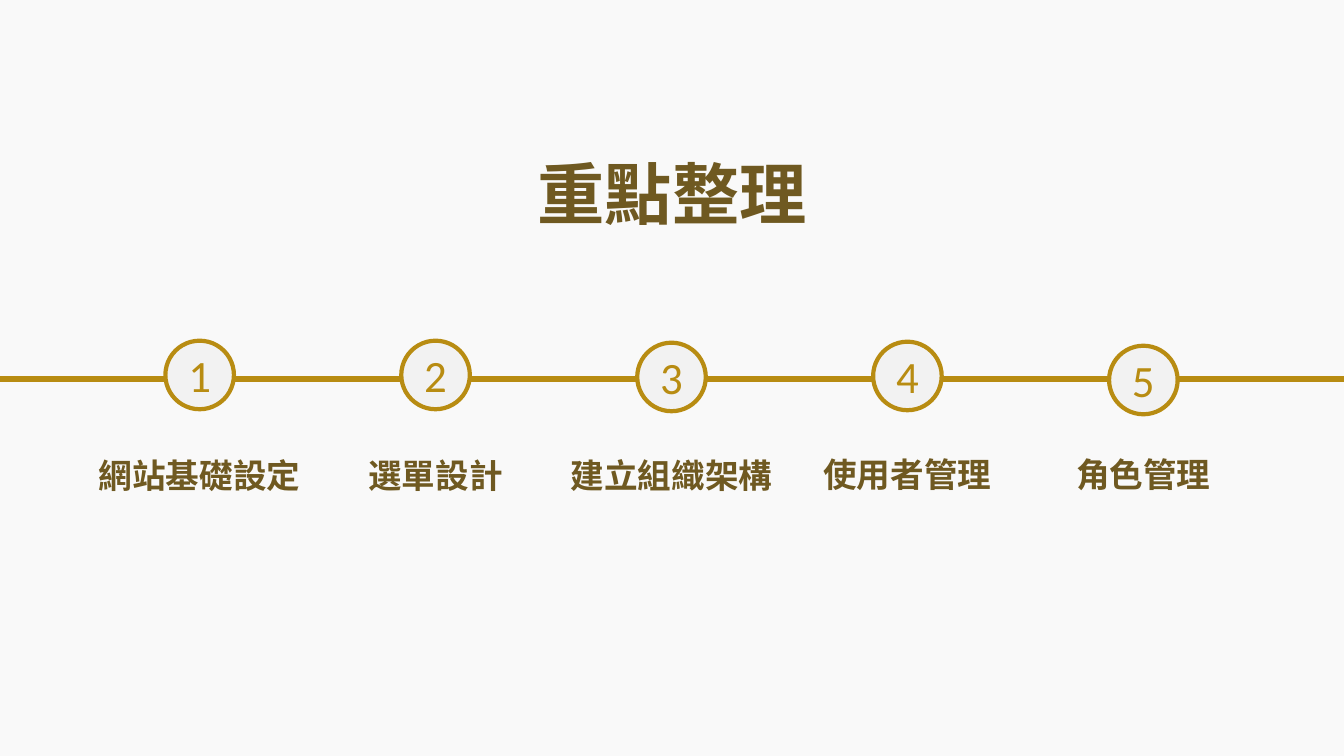
from lxml import etree
from pptx import Presentation
from pptx.dml.color import RGBColor
from pptx.enum import shapes, text
from pptx.oxml import ns
from pptx.util import Inches, Pt

HUES = {"back": "F9F9F9", "disc": "F2F2F2", "gold": "B88C12", "brown": "6F5921"}
HAN = "Noto Sans CJK SC"
TITLE = {"size": Pt(48), "bold": True, "name": HAN}
LABEL = {"size": Pt(24), "bold": True, "name": HAN}
DIGIT = {"size": Pt(32), "bold": False, "name": "Calibri"}
# label, top of its circle, top of its label
STEPS = [
    ("網站基礎設定", 3.38, 4.46),
    ("選單設計", 3.38, 4.46),
    ("建立組織架構", 3.4, 4.46),
    ("使用者管理", 3.39, 4.45),
    ("角色管理", 3.43, 4.45),
]
FIRST, PITCH = 1.98, 2.34
DISC, WIDE = 0.68, 3.43


def hue(name):
    return RGBColor.from_string(HUES[name])


def write(shape, words, form, color, anchor=text.MSO_ANCHOR.MIDDLE):
    frame = shape.text_frame
    frame.word_wrap = True
    frame.vertical_anchor = anchor
    para = frame.paragraphs[0]
    para.alignment = text.PP_ALIGN.CENTER
    run = para.add_run()
    run.text = words
    for key, value in form.items():
        setattr(run.font, key, value)
    run.font.color.rgb = hue(color)
    east = etree.SubElement(run.font._element, ns.qn("a:ea"))
    east.set("typeface", form["name"])


def add_title(slide, words):
    title = slide.shapes.title
    spot = {"left": 4.54, "top": 1.4, "width": 4.25, "height": 1.02}
    for key, value in spot.items():
        setattr(title, key, Inches(value))
    write(title, words, TITLE, "brown")


def add_rail(slide):
    rail = slide.shapes.add_connector(
        shapes.MSO_CONNECTOR.STRAIGHT,
        Inches(0), Inches(3.76), Inches(13.33), Inches(3.76))
    rail.line.color.rgb = hue("gold")
    rail.line.width = Pt(3.75)
    etree.SubElement(rail._element.spPr, ns.qn("a:effectLst"))


def add_disc(slide, mid, top, number):
    disc = slide.shapes.add_shape(
        shapes.MSO_SHAPE.OVAL, Inches(mid - DISC / 2), Inches(top),
        Inches(DISC), Inches(DISC))
    disc.shadow.inherit = False
    disc.fill.solid()
    disc.fill.fore_color.rgb = hue("disc")
    disc.line.color.rgb = hue("gold")
    disc.line.width = Pt(3)
    write(disc, str(number), DIGIT, "gold")


def add_label(slide, mid, top, words):
    box = slide.shapes.add_textbox(
        Inches(mid - WIDE / 2), Inches(top), Inches(WIDE), Inches(0.5))
    write(box, words, LABEL, "brown", text.MSO_ANCHOR.TOP)


def main():
    deck = Presentation()
    deck.slide_width, deck.slide_height = Inches(13.33), Inches(7.5)
    slide = deck.slides.add_slide(deck.slide_layouts.get_by_name("Title Only"))
    slide.background.fill.solid()
    slide.background.fill.fore_color.rgb = hue("back")
    add_title(slide, "重點整理")
    add_rail(slide)
    for i, (words, top, base) in enumerate(STEPS):
        mid = FIRST + i * PITCH
        add_disc(slide, mid, top, i + 1)
        add_label(slide, mid, base, words)
    deck.save("out.pptx")


if __name__ == "__main__":
    main()
